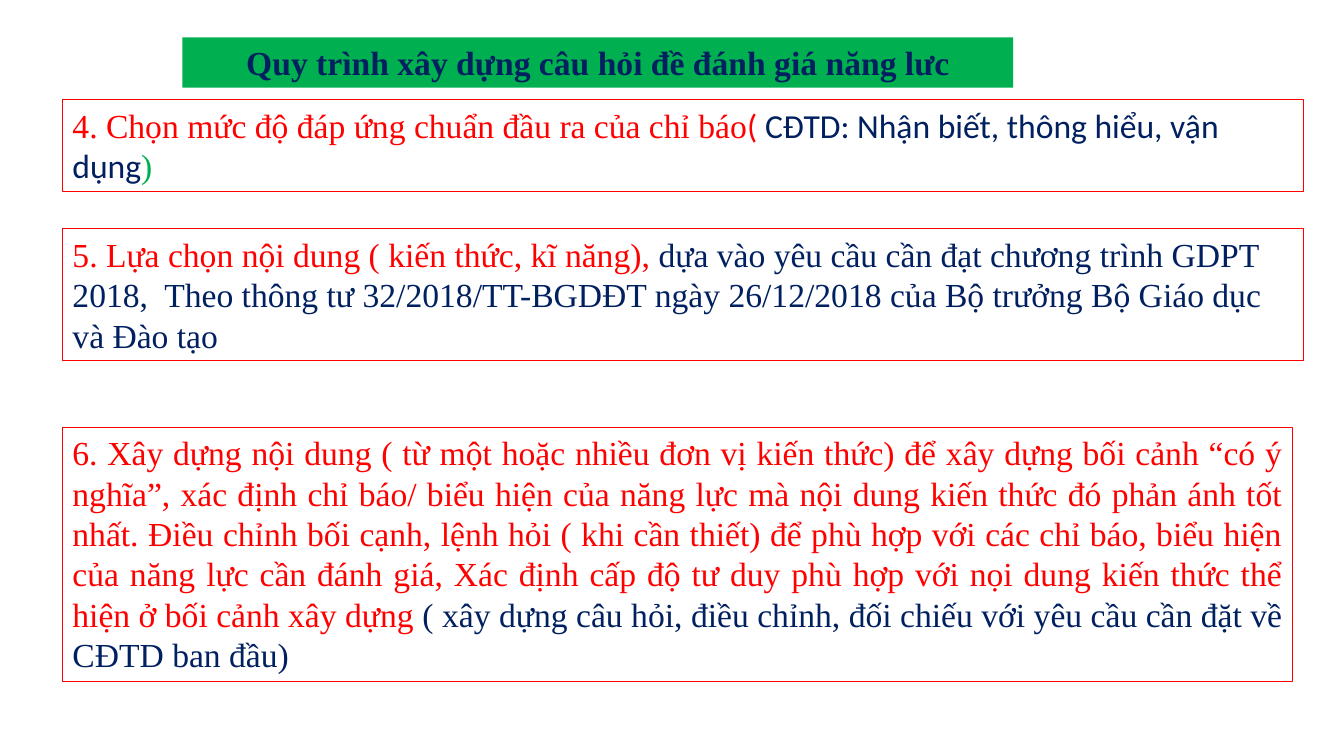
from dataclasses import dataclass
from typing import Optional

from pptx import Presentation
from pptx.dml.color import RGBColor as Rgb
from pptx.enum.shapes import MSO_SHAPE as Kind
from pptx.enum.text import MSO_ANCHOR as Anchor, MSO_AUTO_SIZE as Fit, PP_ALIGN as Align
from pptx.util import Inches, Pt


@dataclass(frozen=True)
class Theme:
    red: Rgb = Rgb(0xFF, 0x00, 0x00)
    navy: Rgb = Rgb(0x00, 0x20, 0x60)
    green: Rgb = Rgb(0x00, 0xB0, 0x50)
    serif: str = "Times New Roman"
    sans: str = "Calibri"
    size: float = 24
    rule: float = 0.75


THEME = Theme()


@dataclass(frozen=True)
class Span:
    text: str
    color: Rgb = THEME.red
    font: str = THEME.serif
    bold: bool = False


@dataclass(frozen=True)
class Panel:
    left: float
    top: float
    width: float
    height: float
    spans: tuple[Span, ...]
    align: Align = Align.LEFT
    fill: Optional[Rgb] = None
    line: Optional[Rgb] = THEME.red


EDGE = 0.62
WIDE = 12.31

PANELS = (
    Panel(1.81, 0.37, 8.24, 0.5, (
        Span("Quy trình xây dựng câu hỏi đề đánh giá năng lưc", THEME.navy, bold=True),
    ), Align.CENTER, THEME.green, None),
    Panel(EDGE, 0.99, WIDE, 0.91, (
        Span("4. Chọn mức độ đáp ứng chuẩn đầu ra của chỉ báo"),
        Span("( ", font=THEME.sans),
        Span("CĐTD: Nhận biết, thông hiểu, vận dụng", THEME.navy, THEME.sans),
        Span(")", THEME.green),
    )),
    Panel(EDGE, 2.27, WIDE, 1.31, (
        Span("5. Lựa chọn nội dung ( kiến thức, kĩ năng), "),
        Span("dựa vào yêu cầu cần đạt chương trình GDPT 2018,  Theo thông tư "
             "32/2018/TT-BGDĐT ngày 26/12/2018 của Bộ trưởng Bộ Giáo dục và Đào tạo",
             THEME.navy),
    )),
    Panel(EDGE, 4.24, 12.2, 2.52, (
        Span("6. Xây dựng nội dung ( từ một hoặc nhiều đơn vị kiến thức) để xây dựng "
             "bối cảnh “có ý nghĩa”, xác định chỉ báo/ biểu hiện của năng lực mà nội "
             "dung kiến thức đó phản ánh tốt nhất. Điều chỉnh bối cạnh, lệnh hỏi ( khi "
             "cần thiết) để phù hợp với các chỉ báo, biểu hiện của năng lực cần đánh "
             "giá, Xác định cấp độ tư duy phù hợp với nọi dung kiến thức thể hiện ở "
             "bối cảnh xây dựng "),
        Span("( xây dựng câu hỏi, điều chỉnh, đối chiếu với yêu cầu cần đặt về CĐTD "
             "ban đầu) ", THEME.navy),
    ), Align.JUSTIFY),
)


def write(para, text: str, *, color: Rgb, font: str, bold: bool) -> None:
    run = para.add_run()
    run.text = text
    run.font.name = font
    run.font.size = Pt(THEME.size)
    run.font.bold = bold
    run.font.color.rgb = color


def draw(slide, panel: Panel) -> None:
    box = slide.shapes.add_shape(
        Kind.RECTANGLE, Inches(panel.left), Inches(panel.top),
        Inches(panel.width), Inches(panel.height))
    box.shadow.inherit = False
    if panel.fill is None:
        box.fill.background()
    else:
        box.fill.solid()
        box.fill.fore_color.rgb = panel.fill
    if panel.line is None:
        box.line.fill.background()
    else:
        box.line.color.rgb = panel.line
        box.line.width = Pt(THEME.rule)
    frame = box.text_frame
    frame.word_wrap = True
    frame.auto_size = Fit.SHAPE_TO_FIT_TEXT
    frame.vertical_anchor = Anchor.TOP
    para = frame.paragraphs[0]
    para.alignment = panel.align
    for span in panel.spans:
        write(para, span.text, color=span.color, font=span.font, bold=span.bold)


def main() -> None:
    deck = Presentation()
    deck.slide_width = Inches(13.33)
    deck.slide_height = Inches(7.5)
    slide = deck.slides.add_slide(deck.slide_layouts[6])
    for panel in PANELS:
        draw(slide, panel)
    deck.save("out.pptx")


if __name__ == "__main__":
    main()
